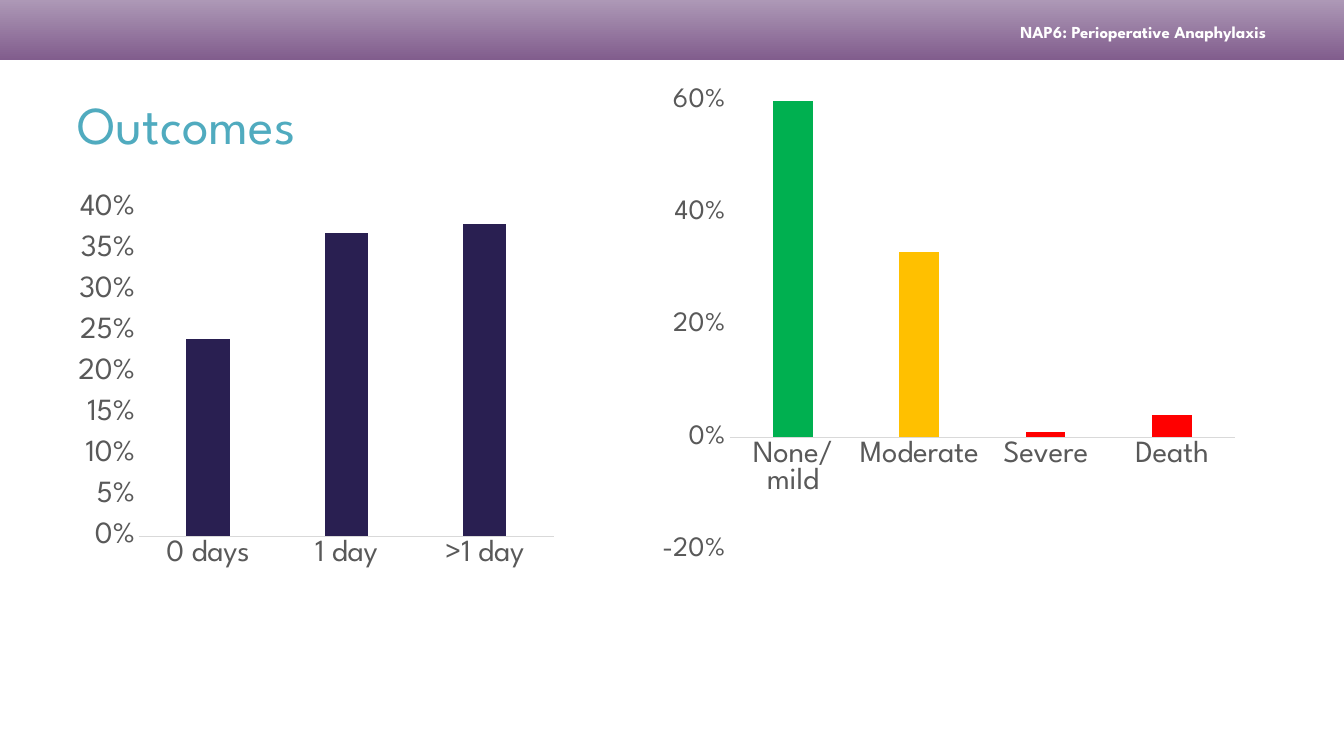
from dataclasses import dataclass

from pptx import Presentation
from pptx.chart.data import CategoryChartData
from pptx.dml.color import RGBColor
from pptx.enum.chart import XL_CHART_TYPE, XL_TICK_MARK
from pptx.enum.shapes import MSO_SHAPE
from pptx.enum.text import MSO_ANCHOR, MSO_AUTO_SIZE, PP_ALIGN
from pptx.util import Inches, Pt


@dataclass(frozen=True)
class Theme:
    font: str = "League Spartan"
    band_dark: str = "815D8D"
    band_light: str = "AD98B6"
    white: str = "FFFFFF"
    title: str = "50ABBF"
    label: str = "595959"
    axis: str = "D9D9D9"
    navy: str = "291F51"
    green: str = "00B050"
    amber: str = "FFC000"
    red: str = "FF0000"
    header_size: int = 12
    title_size: int = 38
    label_size: int = 22
    small_label_size: int = 20


def format_font(font, name, size, color, bold=False):
    font.name = name
    font.size = Pt(size)
    font.bold = bold
    font.color.rgb = RGBColor.from_string(color)


def write_text(frame, text, *, font, size, color, bold=False, align=PP_ALIGN.LEFT):
    frame.word_wrap = True
    frame.auto_size = MSO_AUTO_SIZE.NONE
    frame.vertical_anchor = MSO_ANCHOR.MIDDLE
    para = frame.paragraphs[0]
    para.alignment = align
    span = para.add_run()
    span.text = text
    format_font(span.font, font, size, color, bold)


class OutcomePage:
    def __init__(self, deck, theme):
        self.theme = theme
        self.page = deck.slides.add_slide(deck.slide_layouts[5])

    def band(self, left, top, width, height):
        shape = self.page.shapes.add_shape(
            MSO_SHAPE.RECTANGLE, Inches(left), Inches(top), Inches(width), Inches(height))
        shape.shadow.inherit = False
        shape.line.fill.background()
        shape.fill.gradient()
        shape.fill.gradient_angle = 90
        colors = (self.theme.band_dark, self.theme.band_light)
        for stop, position, color in zip(shape.fill.gradient_stops, (0, 1), colors):
            stop.position = position
            stop.color.rgb = RGBColor.from_string(color)

    def header(self, text, left, top, width, height):
        box = self.page.shapes.add_textbox(
            Inches(left), Inches(top), Inches(width), Inches(height))
        box.text_frame.margin_right = Inches(0.24)
        write_text(box.text_frame, text, font=self.theme.font, size=self.theme.header_size,
                   color=self.theme.white, bold=True, align=PP_ALIGN.RIGHT)

    def title(self, text, left, top, width, height):
        box = self.page.shapes.title
        box.left, box.top = Inches(left), Inches(top)
        box.width, box.height = Inches(width), Inches(height)
        write_text(box.text_frame, text, font=self.theme.font, size=self.theme.title_size,
                   color=self.theme.title)

    def column_chart(self, left, top, width, height, values, colors, scale, value_size):
        theme = self.theme
        data = CategoryChartData(number_format="0%")
        data.categories = list(values)
        data.add_series("Series 1", list(values.values()))
        chart = self.page.shapes.add_chart(
            XL_CHART_TYPE.COLUMN_CLUSTERED, Inches(left), Inches(top),
            Inches(width), Inches(height), data).chart
        chart.has_legend = False
        chart.has_title = False
        format_font(chart.font, theme.font, theme.label_size, theme.label)

        plot = chart.plots[0]
        plot.gap_width = 219
        plot.overlap = -27
        plot.vary_by_categories = False
        series = plot.series[0]
        series.invert_if_negative = False
        series.format.fill.solid()
        series.format.fill.fore_color.rgb = RGBColor.from_string(colors[-1])
        for index, color in enumerate(colors[:-1]):
            fill = series.points[index].format.fill
            fill.solid()
            fill.fore_color.rgb = RGBColor.from_string(color)

        sizes = ((chart.category_axis, theme.label_size), (chart.value_axis, value_size))
        for axis, size in sizes:
            axis.has_major_gridlines = False
            axis.major_tick_mark = axis.minor_tick_mark = XL_TICK_MARK.NONE
            format_font(axis.tick_labels.font, theme.font, size, theme.label)
        line = chart.category_axis.format.line
        line.color.rgb = RGBColor.from_string(theme.axis)
        line.width = Pt(0.75)

        value_axis = chart.value_axis
        value_axis.minimum_scale, value_axis.maximum_scale, value_axis.major_unit = scale
        value_axis.tick_labels.number_format = "0%"
        value_axis.tick_labels.number_format_is_linked = False
        value_axis.format.line.fill.background()


def main():
    deck = Presentation()
    deck.slide_width, deck.slide_height = Inches(13.33), Inches(7.5)
    theme = Theme()
    page = OutcomePage(deck, theme)
    page.band(0, 0, 13.33, 0.6)
    page.header("NAP6: Perioperative Anaphylaxis", 8.35, 0.18, 4.45, 0.28)
    page.title("Outcomes", 0.67, 0.6, 12, 1.25)
    page.column_chart(
        6.45, 0.77, 5.92, 4.91,
        {"None/mild": 0.63, "Moderate": 0.33, "Severe": 0.01, "Death": 0.04},
        (theme.green, theme.amber, theme.red), (-0.2, 0.6, 0.2), theme.small_label_size)
    page.column_chart(
        0.68, 1.85, 4.91, 3.86,
        {"0 days": 0.24, "1 day": 0.37, ">1 day": 0.38},
        (theme.navy,), (0, 0.4, 0.05), theme.label_size)
    deck.save("out.pptx")


if __name__ == "__main__":
    main()
